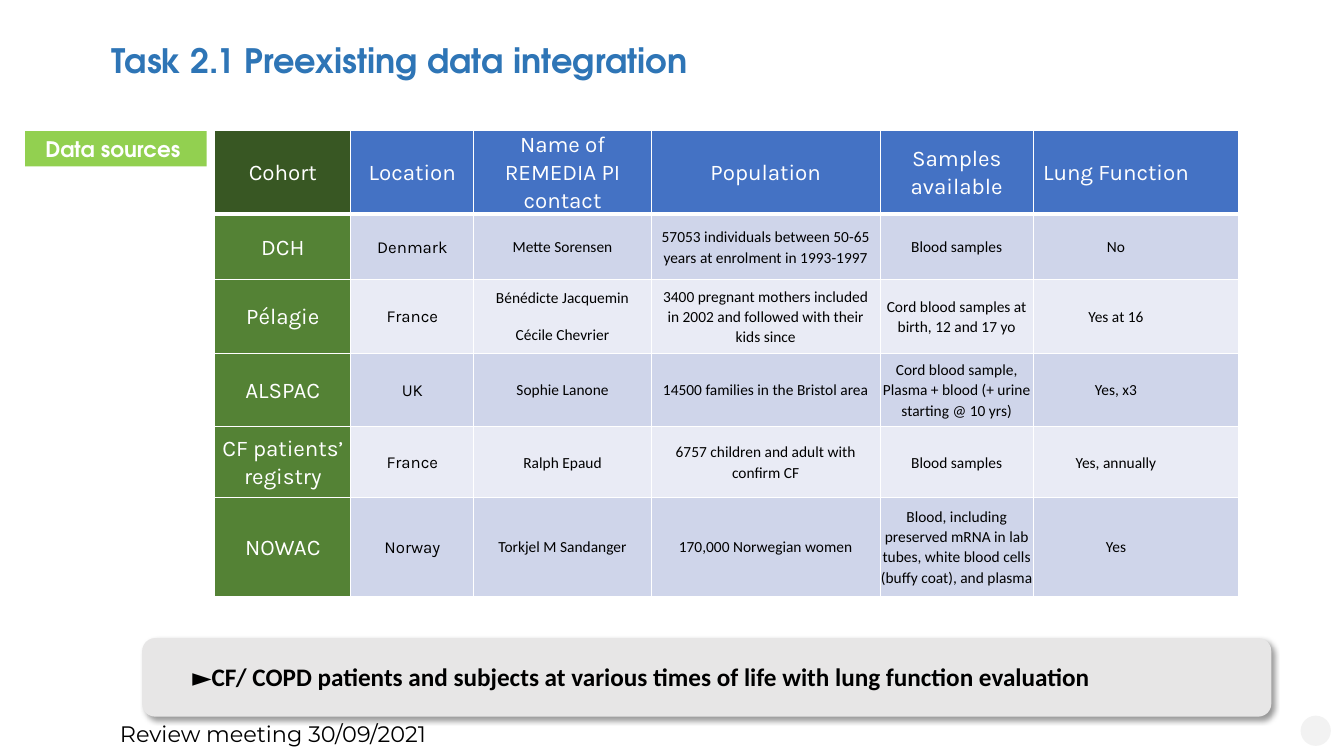
import pptx
import pptx.util
import pptx.oxml
import pptx.dml.color
import pptx.enum.shapes
import pptx.enum.text

Inches, Pt = pptx.util.Inches, pptx.util.Pt
RGBColor = pptx.dml.color.RGBColor
MSO_SHAPE = pptx.enum.shapes.MSO_SHAPE
ALIGN = pptx.enum.text.PP_ALIGN
ANCHOR = pptx.enum.text.MSO_ANCHOR
NO_AUTOFIT = pptx.enum.text.MSO_AUTO_SIZE.NONE
NS = 'xmlns:a="http://schemas.openxmlformats.org/drawingml/2006/main"'

WHITE = RGBColor(0xFF, 0xFF, 0xFF)
BLACK = RGBColor(0, 0, 0)
TITLE_BLUE = RGBColor(0x2E, 0x75, 0xB6)
LIME = RGBColor(0x92, 0xD0, 0x50)
DARK_GREEN = RGBColor(0x38, 0x57, 0x23)
GREEN = RGBColor(0x54, 0x82, 0x35)
HEADER_BLUE = RGBColor(0x44, 0x72, 0xC4)
BANDS = [RGBColor(0xE9, 0xEB, 0xF5), RGBColor(0xCF, 0xD5, 0xEA)]
PANEL_GREY = RGBColor(0xE7, 0xE6, 0xE6)
DOT_GREY = RGBColor(0xF2, 0xF2, 0xF2)

LABEL = {"name": "Karla", "size": Pt(16), "color": WHITE}
PLACE = {"name": "Karla", "size": Pt(12), "color": BLACK}
DETAIL = {"name": "Calibri", "size": Pt(11), "color": BLACK}


def write(p, text, style):
    r = p.add_run()
    r.text = text
    for name, value in style.items():
        if name == "color":
            r.font.color.rgb = value
        else:
            setattr(r.font, name, value)


def place(sp, left, top, width, height):
    sp.left, sp.top = Inches(left), Inches(top)
    sp.width, sp.height = Inches(width), Inches(height)


prs = pptx.Presentation()
prs.slide_width, prs.slide_height = Inches(13.33), Inches(7.5)
slide = prs.slides.add_slide(prs.slide_layouts[1])
shapes = slide.shapes

# Title and section tag
title, tag = shapes.title, slide.placeholders[1]
place(title, 1.01, 0.39, 11.5, 0.57)
place(tag, 0.25, 1.3, 1.8, 0.35)
tag.fill.solid()
tag.fill.fore_color.rgb = LIME
for sp, text, size, color, align, anchor in [
    (title, "Task 2.1 Preexisting data integration", 24, TITLE_BLUE, ALIGN.LEFT, ANCHOR.TOP),
    (tag, "Data sources ", 15.3, WHITE, ALIGN.CENTER, ANCHOR.MIDDLE),
]:
    tf = sp.text_frame
    tf.auto_size, tf.vertical_anchor = NO_AUTOFIT, anchor
    p = tf.paragraphs[0]
    p.alignment, p.space_before = align, Pt(0)
    write(p, text, {"name": "TeX Gyre Adventor", "size": Pt(size), "color": color, "bold": True})
title.text_frame.paragraphs[0].line_spacing = 0.9
pPr = tag.text_frame.paragraphs[0]._p.get_or_add_pPr()
pPr.set("marL", "0")
pPr.set("indent", "0")
pPr.append(pptx.oxml.parse_xml(f"<a:buNone {NS}/>"))

# Corner dot and conclusion panel
dot = shapes.add_shape(MSO_SHAPE.OVAL, Inches(12.9), Inches(7.1), Inches(0.3), Inches(0.3))
panel = shapes.add_shape(MSO_SHAPE.ROUNDED_RECTANGLE, Inches(1.41), Inches(6.33), Inches(11.2), Inches(0.78))
for sp, color in [(dot, DOT_GREY), (panel, PANEL_GREY)]:
    sp.shadow.inherit = False
    sp.fill.solid()
    sp.fill.fore_color.rgb = color
    sp.line.fill.background()
panel._element.spPr.find(pptx.oxml.ns.qn("a:effectLst")).append(pptx.oxml.parse_xml(
    f'<a:outerShdw {NS} blurRad="{Pt(4)}" dist="{Pt(3)}" dir="2700000" algn="tl" rotWithShape="0">'
    '<a:srgbClr val="000000"><a:alpha val="40000"/></a:srgbClr></a:outerShdw>'))

# Cohort table
cohorts = [
    ["Cohort", "Location", "Name of REMEDIA PI contact", "Population", "Samples available", "Lung Function"],
    ["DCH", "Denmark", "Mette Sorensen", "57053 individuals between 50-65 years at enrolment in 1993-1997",
     "Blood samples", "No"],
    ["Pélagie", "France", "Bénédicte Jacquemin\nCécile Chevrier",
     "3400 pregnant mothers included in 2002 and followed with their kids since",
     "Cord blood samples at birth, 12 and 17 yo", "Yes at 16"],
    ["ALSPAC", "UK", "Sophie Lanone", "14500 families in the Bristol area",
     "Cord blood sample, Plasma + blood (+ urine starting @ 10 yrs)", "Yes, x3"],
    ["CF patients’ registry", "France", "Ralph Epaud", "6757 children and adult with confirm CF",
     "Blood samples", "Yes, annually"],
    ["NOWAC", "Norway", "Torkjel M Sandanger", "170,000 Norwegian women",
     "Blood, including preserved mRNA in lab tubes, white blood cells (buffy coat), and plasma", "Yes"],
]
col_widths = [1.35, 1.22, 1.76, 2.27, 1.52, 2.04]
row_heights = [0.7, 0.65, 0.73, 0.73, 0.7, 0.98]
right_margins = [0.07, 0.07, 0.07, 0.07, 0, 0.4]
table = shapes.add_table(len(row_heights), len(col_widths), Inches(2.13), Inches(1.29),
                         Inches(sum(col_widths)), Inches(sum(row_heights))).table
for col, width in zip(table.columns, col_widths):
    col.width = Inches(width)
for row, height in zip(table.rows, row_heights):
    row.height = Inches(height)

for i, cohort in enumerate(cohorts):
    for j, text in enumerate(cohort):
        cell = table.cell(i, j)
        cell.vertical_anchor = ANCHOR.MIDDLE
        cell.margin_left = Inches(0.07 if j < 4 else 0)
        cell.margin_right = Inches(right_margins[j])
        cell.margin_top = cell.margin_bottom = 0
        for side in "LRTB":
            thick = (i, side) in [(0, "B"), (1, "T")]
            cell._tc.get_or_add_tcPr().append(pptx.oxml.parse_xml(
                f'<a:ln{side} {NS} w="{Pt(3 if thick else 1)}"><a:solidFill>'
                f'<a:srgbClr val="{WHITE}"/></a:solidFill></a:ln{side}>'))
        cell.fill.solid()
        if i == 0:
            cell.fill.fore_color.rgb = HEADER_BLUE if j else DARK_GREEN
        else:
            cell.fill.fore_color.rgb = BANDS[i % 2] if j else GREEN
        style = LABEL if i == 0 or j == 0 else PLACE if j == 1 else DETAIL
        for n, line in enumerate(text.split("\n")):
            tf = cell.text_frame
            p = tf.add_paragraph() if n else tf.paragraphs[0]
            p.alignment, p.line_spacing = ALIGN.CENTER, 1.07
            p.space_before, p.space_after = Pt(6 if n else 0), Pt(6)
            write(p, line, style)

# Conclusion and footer
conclusion = shapes.add_textbox(Inches(1.81), Inches(6.51), Inches(10.8), Inches(0.4))
conclusion.text_frame.word_wrap = True
write(conclusion.text_frame.paragraphs[0],
      "►CF/ COPD patients and subjects at various times of life with lung function evaluation",
      {"name": "Calibri", "size": Pt(18), "color": BLACK, "bold": True})

footer = shapes.add_textbox(Inches(1.19), Inches(7.14), Inches(11.55), Inches(0.19))
tf = footer.text_frame
tf.word_wrap = False
tf.margin_left = tf.margin_right = tf.margin_top = tf.margin_bottom = 0
write(tf.paragraphs[0], "Review meeting 30/09/2021", {"name": "Montserrat", "size": Pt(16), "color": BLACK})

prs.save("out.pptx")
